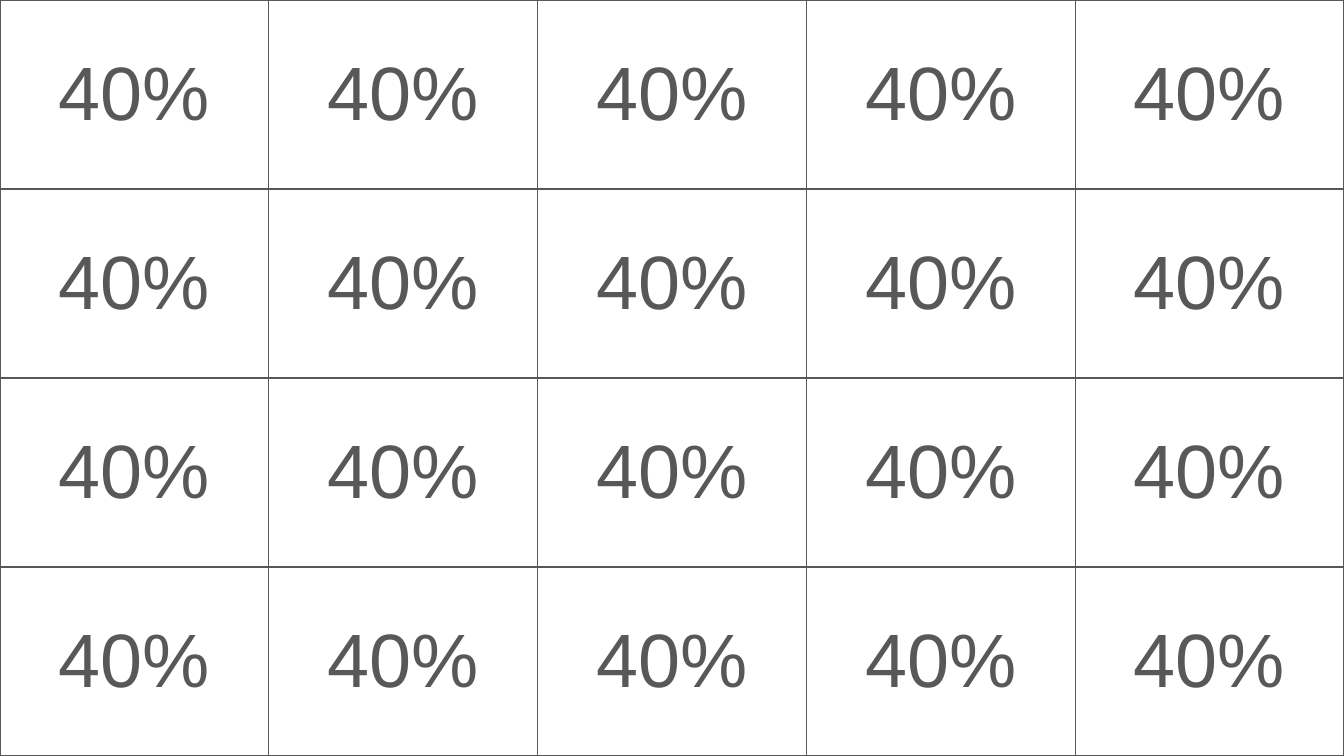
from lxml import etree
from pptx import Presentation
from pptx.dml.color import RGBColor
from pptx.enum.text import MSO_ANCHOR, PP_ALIGN
from pptx.oxml.ns import qn
from pptx.util import Inches, Pt

CENTER = PP_ALIGN.CENTER
MIDDLE = MSO_ANCHOR.MIDDLE
BLANK_LAYOUT = 6
WIDTH, HEIGHT = 13.33, 7.5
ROWS, COLS = 4, 5
GRAY = "585858"


def rgb(color):
    return RGBColor.from_string(color)


def set_borders(cell, color, width):
    tcPr = cell._tc.get_or_add_tcPr()
    for index, side in enumerate(("lnL", "lnR", "lnT", "lnB")):
        ln = etree.Element(qn(f"a:{side}"), w=str(Pt(width)))
        fill = etree.SubElement(ln, qn("a:solidFill"))
        etree.SubElement(fill, qn("a:srgbClr"), val=color)
        tcPr.insert(index, ln)


def fill_cell(cell, text):
    cell.fill.background()
    cell.vertical_anchor = MIDDLE
    set_borders(cell, GRAY, 1)
    p = cell.text_frame.paragraphs[0]
    p.text = text
    p.alignment = CENTER
    p.font.name = "Arial"
    p.font.size = Pt(54)
    p.font.bold = False
    p.font.color.rgb = rgb(GRAY)


def add_percent_grid(s, left, top, width, height):
    frame = s.shapes.add_table(ROWS, COLS, Inches(left), Inches(top),
                               Inches(width), Inches(height))
    table = frame.table
    table.first_row = False
    table.horz_banding = False
    for cell in table.iter_cells():
        fill_cell(cell, "40%")


def main():
    prs = Presentation()
    prs.slide_width = Inches(WIDTH)
    prs.slide_height = Inches(HEIGHT)
    s = prs.slides.add_slide(prs.slide_layouts[BLANK_LAYOUT])
    add_percent_grid(s, 0, 0, WIDTH, HEIGHT)
    prs.save("out.pptx")


if __name__ == "__main__":
    main()
